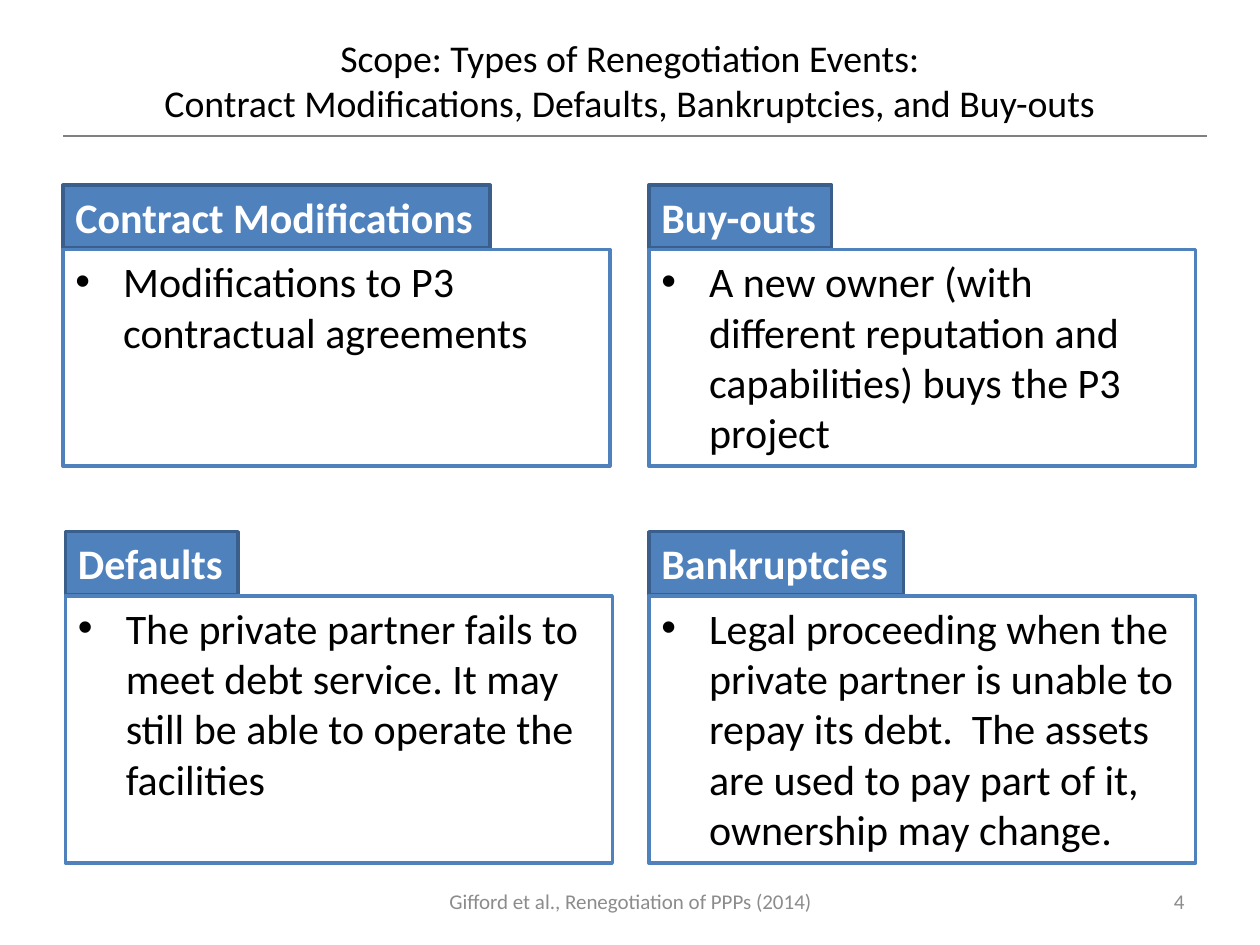
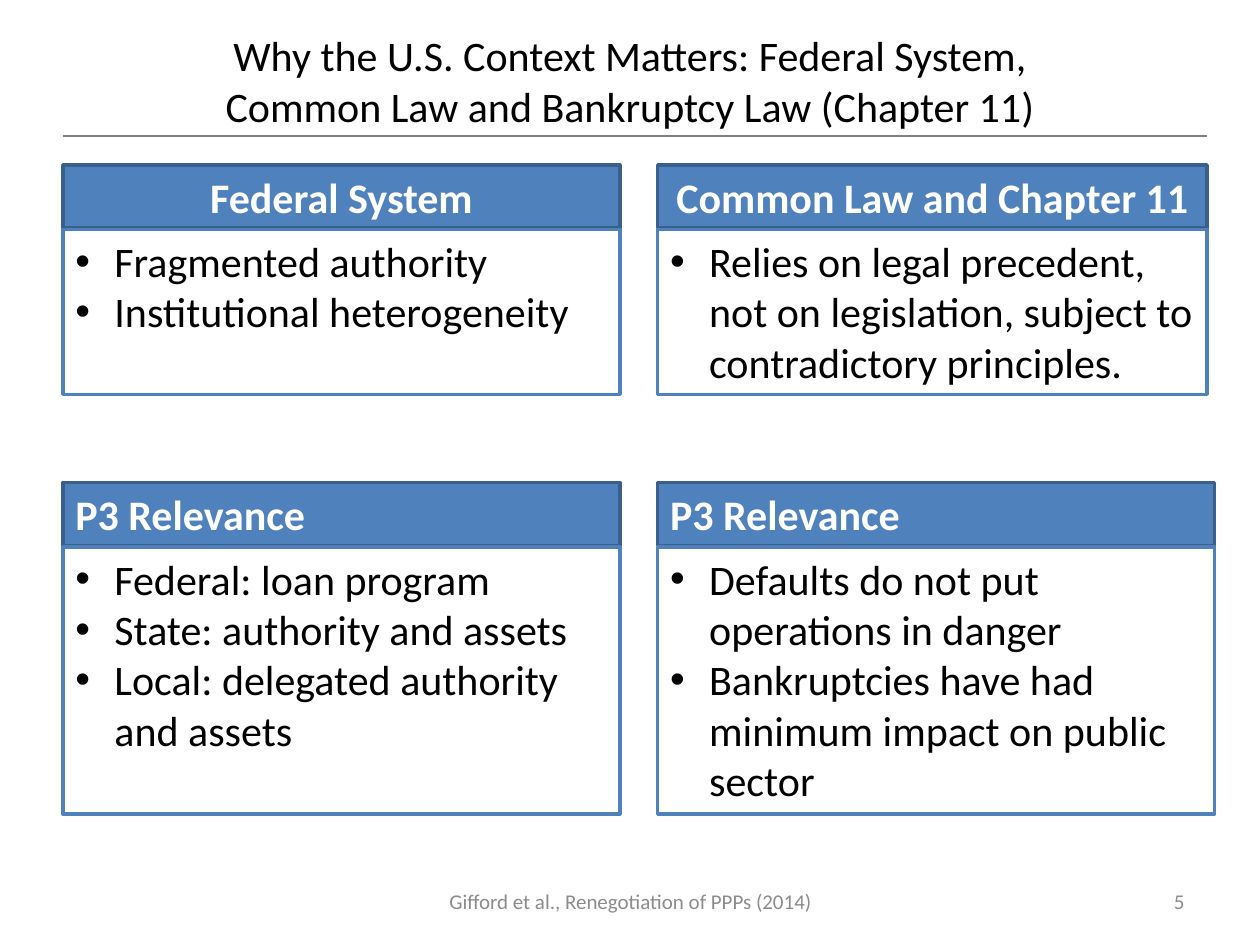
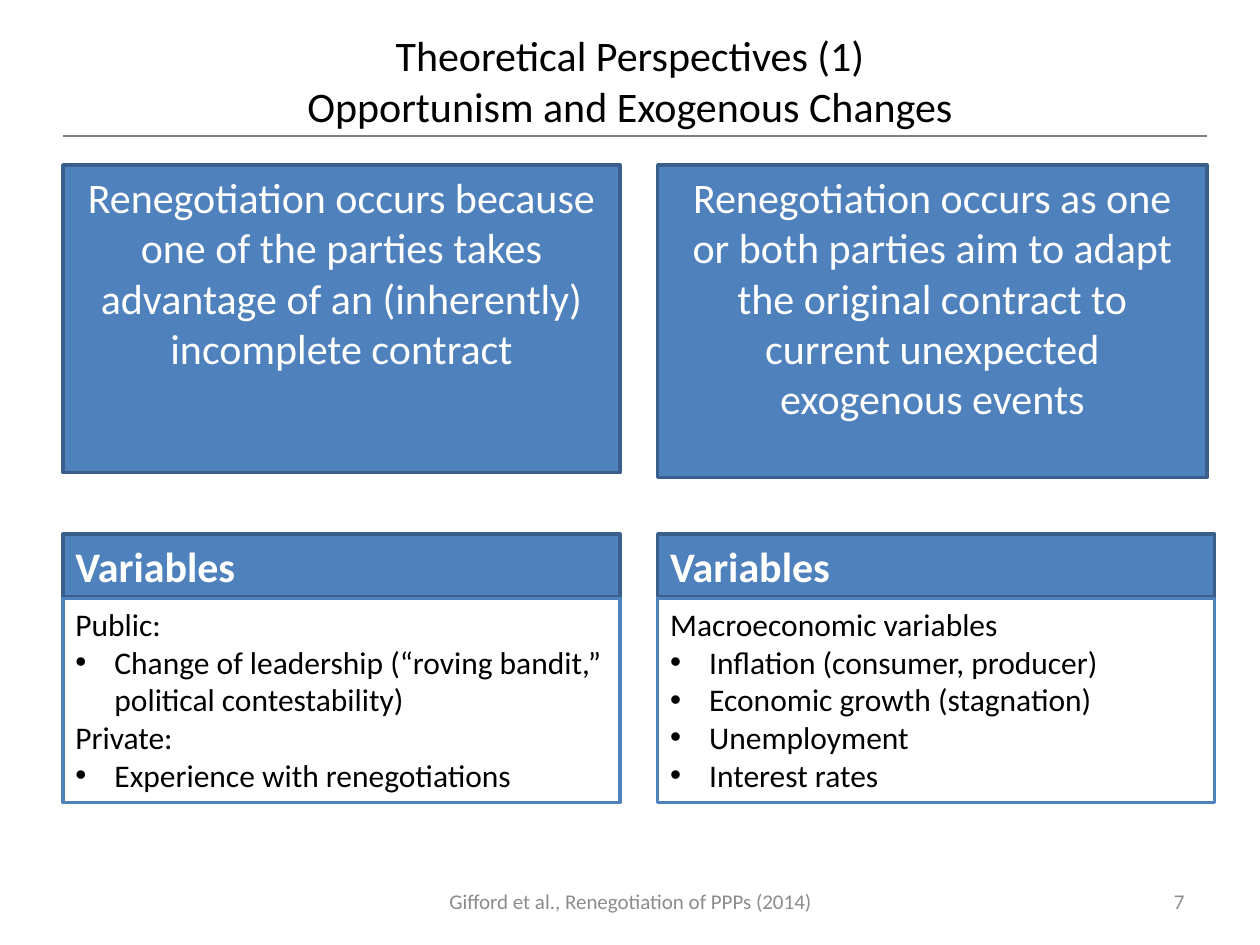
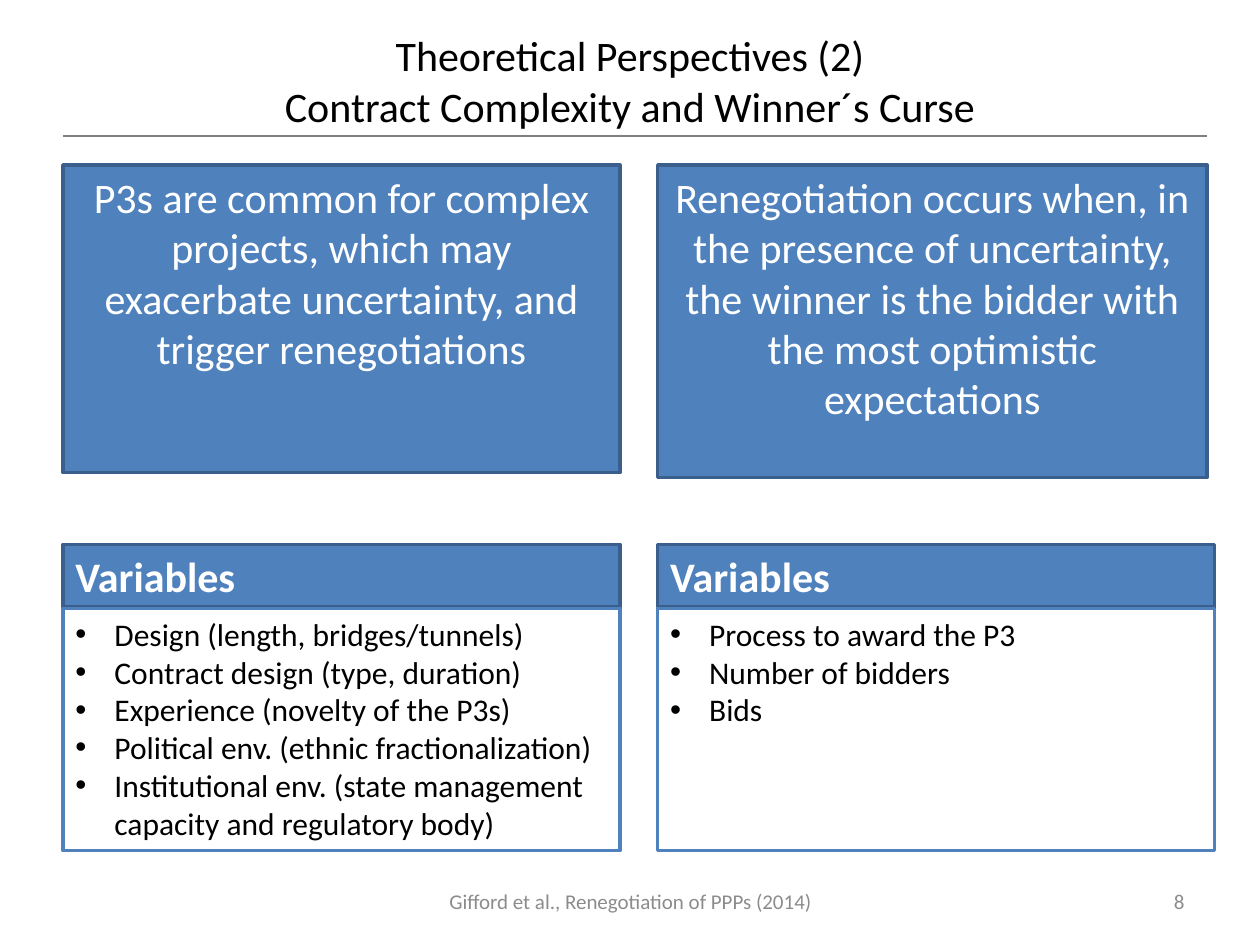
from dataclasses import dataclass

from lxml.etree import SubElement
from pptx import Presentation
from pptx.dml.color import RGBColor
from pptx.enum.shapes import MSO_CONNECTOR, MSO_SHAPE
from pptx.enum.text import MSO_ANCHOR, MSO_AUTO_SIZE, PP_ALIGN
from pptx.oxml.ns import qn
from pptx.util import Inches, Pt

FONT = "Calibri"
BLACK, WHITE, GRAY, RULE_GRAY = "000000", "FFFFFF", "8C8C8C", "808080"
BLUE, DARK_BLUE = "4F81BD", "3A5F8C"
FOOTER = "Gifford et al., Renegotiation of PPPs (2014)"

LEFT, RIGHT, SCOPE_RIGHT = 0.5, 5.22, 5.15
WIDE, NARROW, SCOPE_WIDTH = 4.42, 4.36, 4.34
TOP = 1.31
HEADING_HEIGHT, BODY_OFFSET = 0.5, 0.51


@dataclass
class Statement:
    left: float
    width: float
    height: float
    text: str


@dataclass
class Card:
    """A heading tab over a framed list; groups are (lead line, bullets)."""
    left: float
    top: float
    width: float
    body_height: float
    heading: str
    groups: list
    heading_width: float = WIDE
    centered: bool = False
    size: int = 24
    indent: float = 0.31


def scope_card(left, top, height, heading, heading_width, bullet):
    return Card(left, top, SCOPE_WIDTH, height, heading, [("", [bullet])],
                heading_width, indent=0.38)


def variables_card(left, top, height, groups):
    return Card(left, top, WIDE, height, "Variables", groups, size=18)


SLIDES = [
    (4, "Scope: Types of Renegotiation Events:\n"
        "Contract Modifications, Defaults, Bankruptcies, and Buy-outs", 21.6, [
        scope_card(LEFT, 1.47, 1.72, "Contract Modifications", 3.39,
                   "Modifications to P3 contractual agreements"),
        scope_card(SCOPE_RIGHT, 1.47, 1.72, "Buy-outs", 1.45,
                   "A new owner (with different reputation and capabilities) "
                   "buys the P3 project"),
        scope_card(0.52, 4.22, 2.12, "Defaults", 1.37,
                   "The private partner fails to meet debt service. It may "
                   "still be able to operate the facilities"),
        scope_card(SCOPE_RIGHT, 4.22, 2.12, "Bankruptcies", 2.02,
                   "Legal proceeding when the private partner is unable to "
                   "repay its debt.  The assets are used to pay part of it, "
                   "ownership may change."),
    ]),
    (5, "Why the U.S. Context Matters: Federal System,\n"
        "Common Law and Bankruptcy Law (Chapter 11)", 24, [
        Card(LEFT, TOP, WIDE, 1.31, "Federal System",
             [("", ["Fragmented authority", "Institutional heterogeneity"])],
             centered=True),
        Card(RIGHT, TOP, NARROW, 1.31, "Common Law and Chapter 11",
             [("", ["Relies on legal precedent, not on legislation, subject "
                    "to contradictory principles."])],
             heading_width=NARROW, centered=True),
        Card(LEFT, 3.83, WIDE, 2.12, "P3 Relevance",
             [("", ["Federal: loan program", "State: authority and assets",
                    "Local: delegated authority and assets"])]),
        Card(RIGHT, 3.83, WIDE, 2.12, "P3 Relevance",
             [("", ["Defaults do not put operations in danger",
                    "Bankruptcies have had minimum impact on public sector"])]),
    ]),
    (7, "Theoretical Perspectives (1)\nOpportunism and Exogenous Changes", 24, [
        Statement(LEFT, WIDE, 2.44,
                  "Renegotiation occurs because one of the parties takes "
                  "advantage of an (inherently)\nincomplete contract"),
        Statement(RIGHT, NARROW, 2.48,
                  "Renegotiation occurs as one or both parties aim to adapt "
                  "the original contract to current unexpected exogenous events"),
        variables_card(LEFT, 4.24, 1.62, [
            ("Public:", ["Change of leadership (“roving bandit,” "
                         "political contestability)"]),
            ("Private:", ["Experience with renegotiations"])]),
        variables_card(RIGHT, 4.24, 1.62, [
            ("Macroeconomic variables",
             ["Inflation (consumer, producer)", "Economic growth (stagnation)",
              "Unemployment", "Interest rates"])]),
    ]),
    (8, "Theoretical Perspectives (2)\nContract Complexity and Winner´s Curse", 24, [
        Statement(LEFT, WIDE, 2.44,
                  "P3s are common for complex projects, which may exacerbate "
                  "uncertainty, and trigger renegotiations"),
        Statement(RIGHT, NARROW, 2.48,
                  "Renegotiation occurs when, in the presence of uncertainty, "
                  "the winner is the bidder with the most optimistic expectations"),
        variables_card(LEFT, 4.32, 1.92, [
            ("", ["Design (length, bridges/tunnels)",
                  "Contract design (type, duration)",
                  "Experience (novelty of the P3s)",
                  "Political env. (ethnic fractionalization)",
                  "Institutional env. (state management capacity and "
                  "regulatory body)"])]),
        variables_card(RIGHT, 4.32, 1.92, [
            ("", ["Process to award the P3", "Number of bidders", "Bids"])]),
    ]),
]


def color(value):
    return RGBColor.from_string(value)


def write(paragraph, text, size, text_color, align=PP_ALIGN.LEFT, bold=False):
    paragraph.text = text
    paragraph.alignment = align
    for run in paragraph.runs:
        run.font.name = FONT
        run.font.size = Pt(size)
        run.font.bold = bold
        run.font.color.rgb = color(text_color)


def add_bullet(paragraph, indent):
    properties = paragraph._p.get_or_add_pPr()
    properties.set("marL", str(Inches(indent)))
    properties.set("indent", str(-Inches(indent)))
    SubElement(properties, qn("a:buFont"), typeface="Arial")
    SubElement(properties, qn("a:buChar"), char="•")


def add_label(slide, box, text, size, text_color, align):
    frame = slide.shapes.add_textbox(*map(Inches, box)).text_frame
    frame.word_wrap = True
    frame.vertical_anchor = MSO_ANCHOR.MIDDLE
    write(frame.paragraphs[0], text, size, text_color, align)


def add_panel(slide, box, fill, line):
    """Add a framed rectangle and return its text frame."""
    shape = slide.shapes.add_shape(MSO_SHAPE.RECTANGLE, *map(Inches, box))
    shape.shadow.inherit = False
    shape.fill.solid()
    shape.fill.fore_color.rgb = color(fill)
    shape.line.color.rgb = color(line)
    shape.line.width = Pt(2)
    frame = shape.text_frame
    frame.word_wrap = True
    frame.vertical_anchor = MSO_ANCHOR.TOP
    return frame


def add_statement(slide, statement):
    box = (statement.left, TOP, statement.width, statement.height)
    frame = add_panel(slide, box, BLUE, DARK_BLUE)
    write(frame.paragraphs[0], statement.text, 24, WHITE, PP_ALIGN.CENTER)


def add_card(slide, card):
    heading = add_panel(slide, (card.left, card.top, card.heading_width,
                                HEADING_HEIGHT), BLUE, DARK_BLUE)
    if card.heading_width < card.width:
        heading.word_wrap = False
        heading.auto_size = MSO_AUTO_SIZE.SHAPE_TO_FIT_TEXT
    align = PP_ALIGN.CENTER if card.centered else PP_ALIGN.LEFT
    write(heading.paragraphs[0], card.heading, 24, WHITE, align, bold=True)

    body = add_panel(slide, (card.left, card.top + BODY_OFFSET, card.width,
                             card.body_height), WHITE, BLUE)
    lines = []
    for lead, bullets in card.groups:
        if lead:
            lines.append((lead, False))
        lines += [(bullet, True) for bullet in bullets]
    for index, (text, bulleted) in enumerate(lines):
        paragraph = body.add_paragraph() if index else body.paragraphs[0]
        if bulleted:
            add_bullet(paragraph, card.indent)
        write(paragraph, text, card.size, BLACK)


def add_frame(slide, number, title, title_size):
    """Add the title, the rule under it, the footer and the slide number."""
    add_label(slide, (0.5, 0.13, 9, 1.01), title, title_size, BLACK,
              PP_ALIGN.CENTER)
    rule = slide.shapes.add_connector(
        MSO_CONNECTOR.STRAIGHT, *map(Inches, (0.5, 1.08, 9.58, 1.08)))
    rule.line.color.rgb = color(RULE_GRAY)
    rule.line.width = Pt(1.25)
    SubElement(rule._element.spPr, qn("a:effectLst"))
    add_label(slide, (3.42, 6.95, 3.17, 0.4), FOOTER, 12, GRAY, PP_ALIGN.CENTER)
    add_label(slide, (7.17, 6.95, 2.33, 0.4), str(number), 12, GRAY,
              PP_ALIGN.RIGHT)


def main():
    presentation = Presentation()
    presentation.slide_width = Inches(10)
    presentation.slide_height = Inches(7.5)
    for number, title, title_size, parts in SLIDES:
        slide = presentation.slides.add_slide(presentation.slide_layouts[6])
        add_frame(slide, number, title, title_size)
        for part in parts:
            if isinstance(part, Statement):
                add_statement(slide, part)
            else:
                add_card(slide, part)
    presentation.save("out.pptx")


if __name__ == "__main__":
    main()
